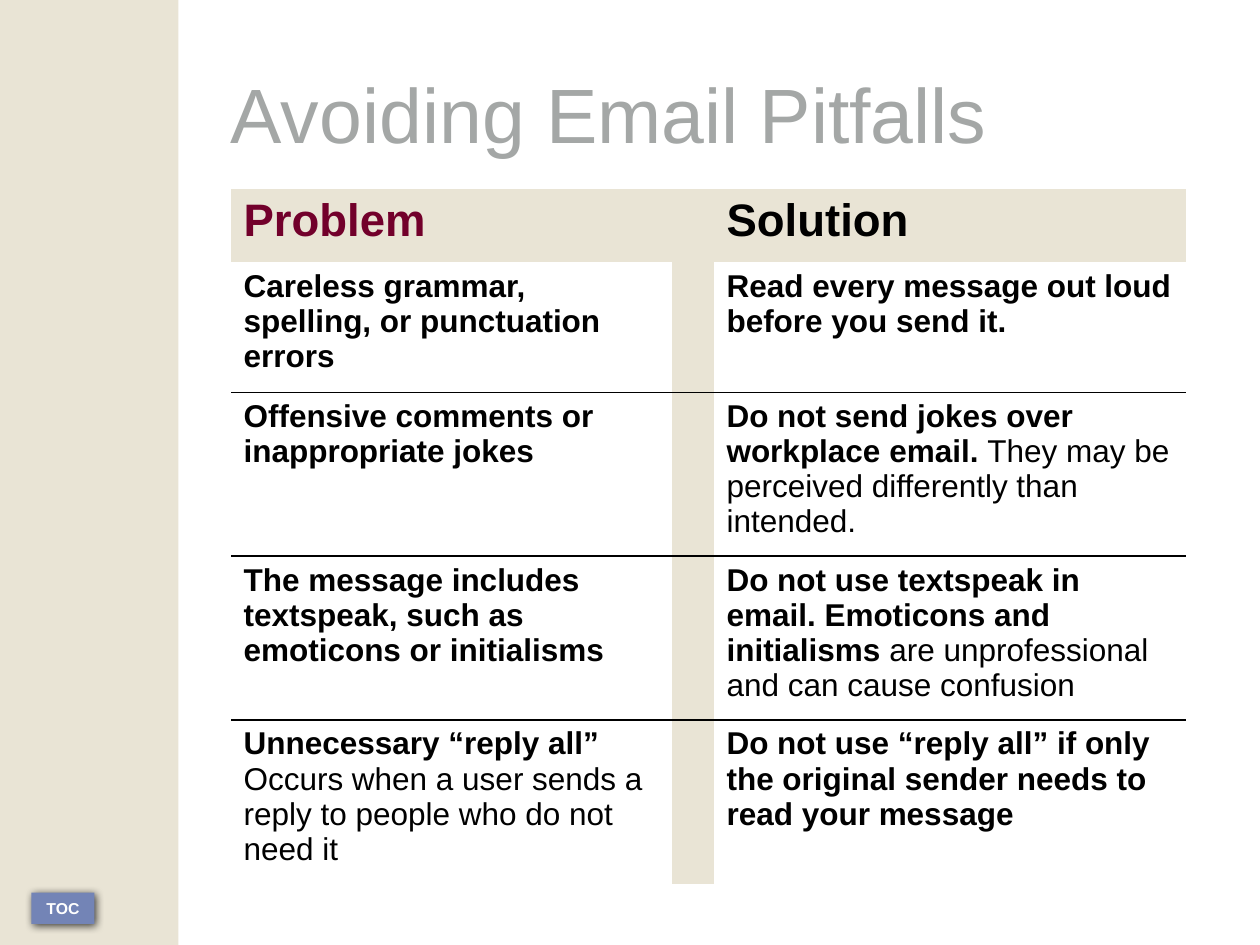
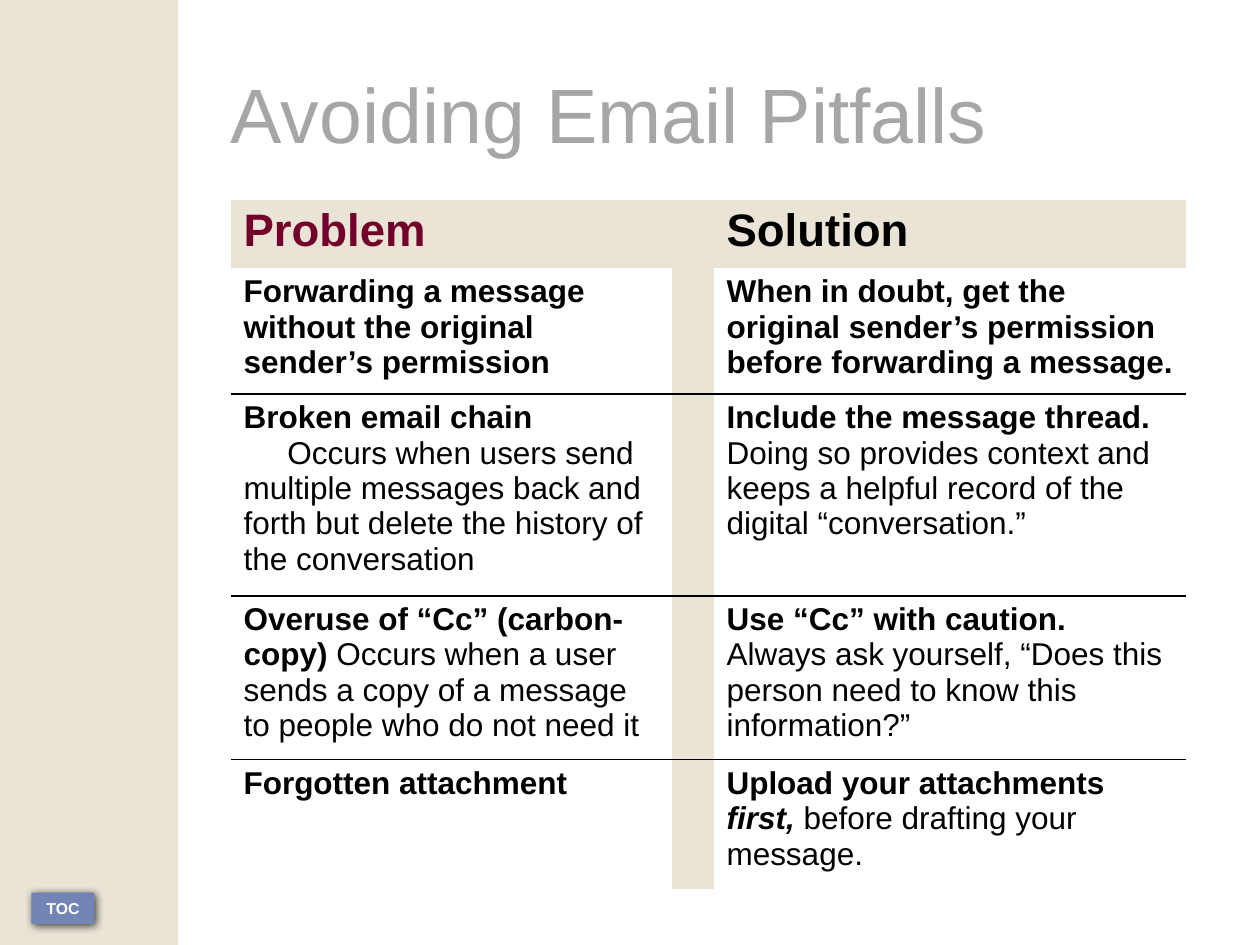
from collections import namedtuple
from dataclasses import dataclass

from lxml import etree
from pptx import Presentation
from pptx.dml.color import RGBColor
from pptx.enum import shapes, text
from pptx.oxml import ns
from pptx.util import Pt

Box = namedtuple("Box", "left top width height")


@dataclass(frozen=True)
class Theme:
    font: str = "Arial"
    sand: str = "E9E4D5"
    button: str = "7384B6"
    title: str = "A4A7A6"
    problem: str = "72002B"
    ink: str = "000000"
    paper: str = "FFFFFF"
    title_size: float = 44
    heading_size: float = 26
    body_size: float = 18
    button_size: float = 9
    space_before: float = 7.5
    rule_width: float = 1


THEME = Theme()
PAGE = Box(0, 0, 720, 540)
SIDEBAR = Box(0, 0, 102, PAGE.height)
TOC_BUTTON = Box(18, 510, 36, 18)
TITLE = Box(132, 48, 546, 90)
COLUMNS = (252, 24, 270)
GAP_COLUMN = 1
HEADINGS = (("Problem", THEME.problem), ("Solution", THEME.ink))
NO_GRID_STYLE = "{2D5ABB26-0587-4C30-8999-92F81FD0307C}"
REGULAR, BOLD, BOLD_ITALIC = "", "b", "bi"

Pitfall = namedtuple("Pitfall", "height problem solution")
PitfallSlide = namedtuple("PitfallSlide", "title table_top heading_height pitfalls")


def bold(words):
    return [[(words, BOLD)]]


def lead(strong, rest):
    return [[(strong, BOLD), (rest, REGULAR)]]


SLIDES = [
    PitfallSlide("Avoiding Email Pitfalls", 108, 42, [
        Pitfall(74.2,
                bold("Careless grammar, spelling, or punctuation errors"),
                bold("Read every message out loud before you send it.")),
        Pitfall(93.6,
                bold("Offensive comments or inappropriate jokes"),
                lead("Do not send jokes over workplace email. ",
                     "They may be perceived differently than intended.")),
        Pitfall(93.6,
                bold("The message includes textspeak, such as emoticons or initialisms"),
                lead("Do not use textspeak in email. Emoticons and initialisms ",
                     "are unprofessional and can cause confusion")),
        Pitfall(93.6,
                lead("Unnecessary “reply all” ",
                     "Occurs when a user sends a reply to people who do not need it"),
                bold("Do not use “reply all” if only the original sender "
                     "needs to read your message")),
    ]),
    PitfallSlide("Avoiding Email Pitfalls", 114, 39.2, [
        Pitfall(72,
                bold("Forwarding a message without the original sender’s permission"),
                bold("When in doubt, get the original sender’s permission "
                     "before forwarding a message.")),
        Pitfall(115.2,
                [[("Broken email chain", BOLD)],
                 [("Occurs when users send multiple messages back and forth "
                   "but delete the history of the conversation", REGULAR)]],
                lead("Include the message thread. ",
                     "Doing so provides context and keeps a helpful record "
                     "of the digital “conversation.”")),
        Pitfall(93.6,
                lead("Overuse of “Cc” (carbon-copy) ",
                     "Occurs when a user sends a copy of a message "
                     "to people who do not need it"),
                lead("Use “Cc” with caution. ",
                     "Always ask yourself, “Does this person need to know "
                     "this information?”")),
        Pitfall(74.2,
                bold("Forgotten attachment"),
                [[("Upload your attachments ", BOLD), ("first, ", BOLD_ITALIC),
                  ("before drafting your message.", REGULAR)]]),
    ]),
]


def points(box):
    return [Pt(length) for length in box]


def rgb(color):
    return RGBColor.from_string(color)


def add_run(paragraph, words, size, color, style=REGULAR):
    run = paragraph.add_run()
    run.text = words
    run.font.name = THEME.font
    run.font.size = Pt(size)
    run.font.color.rgb = rgb(color)
    run.font.bold = "b" in style
    run.font.italic = "i" in style


def add_panel(slide, box, color):
    panel = slide.shapes.add_shape(shapes.MSO_SHAPE.RECTANGLE, *points(box))
    panel.shadow.inherit = False
    panel.fill.solid()
    panel.fill.fore_color.rgb = rgb(color)
    panel.line.fill.background()
    return panel


def add_drop_shadow(shape):
    effects = shape._element.spPr.find(ns.qn("a:effectLst"))
    shadow = etree.SubElement(effects, ns.qn("a:outerShdw"), blurRad=str(Pt(5)),
                              dist=str(Pt(1.4)), dir="2700000", rotWithShape="0")
    color = etree.SubElement(shadow, ns.qn("a:srgbClr"), val=THEME.ink)
    etree.SubElement(color, ns.qn("a:alpha"), val="75000")


def add_toc_button(slide, box):
    button = add_panel(slide, box, THEME.button)
    add_drop_shadow(button)
    frame = button.text_frame
    frame.vertical_anchor = text.MSO_ANCHOR.MIDDLE
    paragraph = frame.paragraphs[0]
    paragraph.alignment = text.PP_ALIGN.CENTER
    add_run(paragraph, "TOC", THEME.button_size, THEME.paper, BOLD)


def add_title(slide, box, words):
    frame = slide.shapes.add_textbox(*points(box)).text_frame
    frame.word_wrap = True
    frame.margin_left = frame.margin_top = 0
    frame.margin_right = frame.margin_bottom = 0
    paragraph = frame.paragraphs[0]
    paragraph.line_spacing = 0.8
    add_run(paragraph, words, THEME.title_size, THEME.title)


def add_rule(cell, side):
    properties = cell._tc.get_or_add_tcPr()
    line = etree.SubElement(properties, ns.qn(f"a:{side}"), w=str(Pt(THEME.rule_width)))
    fill = etree.SubElement(line, ns.qn("a:solidFill"))
    etree.SubElement(fill, ns.qn("a:srgbClr"), val=THEME.ink)


def fill_cell(cell, color):
    if color:
        cell.fill.solid()
        cell.fill.fore_color.rgb = rgb(color)
    else:
        cell.fill.background()


def write_cell(cell, paragraphs, size, color):
    frame = cell.text_frame
    for index, runs in enumerate(paragraphs):
        paragraph = frame.add_paragraph() if index else frame.paragraphs[0]
        paragraph.space_before = Pt(0 if index else THEME.space_before)
        if index:
            paragraph._p.get_or_add_pPr().set("indent", str(Pt(25)))
        for words, style in runs:
            add_run(paragraph, words, size, color, style)


def add_pitfall_table(slide, box, heading_height, pitfalls):
    heights = [heading_height] + [pitfall.height for pitfall in pitfalls]
    frame = slide.shapes.add_table(len(heights), len(COLUMNS), *points(box))
    table = frame.table
    table.first_row = table.horz_banding = False
    table._tbl.tblPr.find(ns.qn("a:tableStyleId")).text = NO_GRID_STYLE
    for column, width in zip(table.columns, COLUMNS):
        column.width = Pt(width)
    last = len(heights) - 1
    for row_index, height in enumerate(heights):
        table.rows[row_index].height = Pt(height)
        for column_index in range(len(COLUMNS)):
            cell = table.cell(row_index, column_index)
            if row_index > 1:
                add_rule(cell, "lnT")
            if 0 < row_index < last:
                add_rule(cell, "lnB")
            shaded = row_index == 0 or column_index == GAP_COLUMN
            fill_cell(cell, THEME.sand if shaded else None)
    for column_index, (words, color) in zip((0, 2), HEADINGS):
        write_cell(table.cell(0, column_index), bold(words), THEME.heading_size, color)
    for row_index, pitfall in enumerate(pitfalls, 1):
        for column_index, content in ((0, pitfall.problem), (2, pitfall.solution)):
            write_cell(table.cell(row_index, column_index), content,
                       THEME.body_size, THEME.ink)


def add_pitfall_slide(presentation, content):
    slide = presentation.slides.add_slide(presentation.slide_layouts[6])
    add_panel(slide, SIDEBAR, THEME.sand)
    add_toc_button(slide, TOC_BUTTON)
    add_title(slide, TITLE, content.title)
    table_height = content.heading_height + sum(item.height for item in content.pitfalls)
    table_box = Box(TITLE.left, content.table_top, sum(COLUMNS), table_height)
    add_pitfall_table(slide, table_box, content.heading_height, content.pitfalls)


def main():
    presentation = Presentation()
    presentation.slide_width = Pt(PAGE.width)
    presentation.slide_height = Pt(PAGE.height)
    for content in SLIDES:
        add_pitfall_slide(presentation, content)
    presentation.save("out.pptx")


if __name__ == "__main__":
    main()
